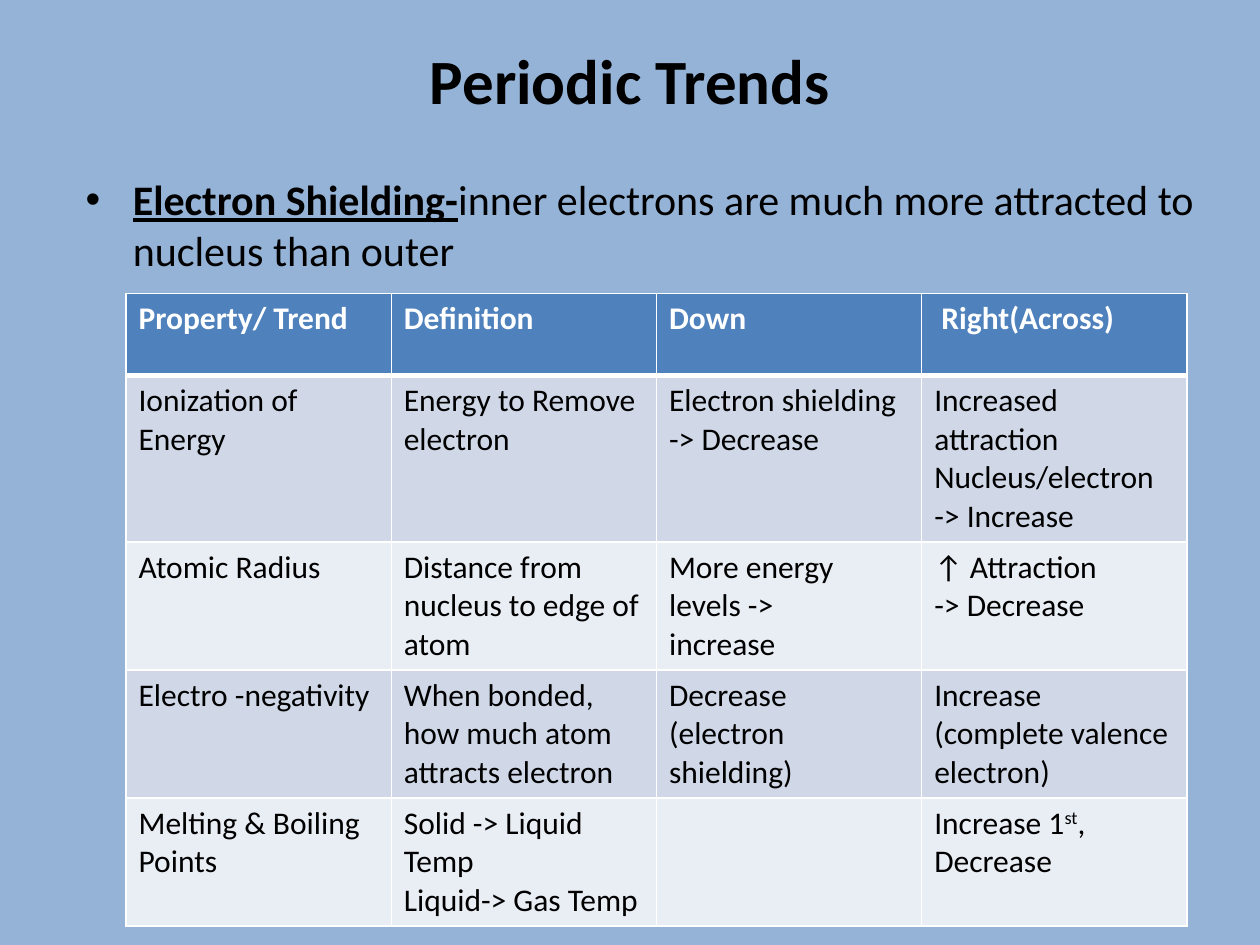
from dataclasses import dataclass

from lxml.etree import SubElement
from pptx import Presentation
from pptx.dml.color import RGBColor as Color
from pptx.enum.text import MSO_ANCHOR as Anchor, PP_ALIGN as Align
from pptx.oxml.ns import qn
from pptx.util import Cm, Pt


@dataclass(frozen=True)
class Theme:
    font: str = "Calibri"
    background: str = "95B3D7"
    ink: str = "000000"
    white: str = "FFFFFF"
    header: str = "4F81BD"
    bands: tuple[str, str] = ("D0D8E8", "E9EDF4")
    title_size: int = 36
    body_size: int = 24
    table_size: int = 18
    thin: int = 1
    thick: int = 3


@dataclass(frozen=True)
class Box:
    left: float
    top: float
    width: float
    height: float

    def lengths(self) -> tuple:
        return Cm(self.left), Cm(self.top), Cm(self.width), Cm(self.height)


@dataclass(frozen=True)
class Trend:
    name: str
    definition: str
    down: str
    across: str

    def cells(self) -> tuple[str, ...]:
        return self.name, self.definition, self.down, self.across


THEME = Theme()
TITLE_BOX = Box(1.27, 0, 22.86, 3.18)
BODY_BOX = Box(1.47, 3.38, 22.86, 2.74)
TABLE_BOX = Box(2.54, 5.92, 21.39, 8.25)
SUPERSCRIPT_MARK = "^"

HEADINGS = Trend("Property/ Trend", "Definition", "Down", " Right(Across)")
TRENDS = (
    Trend("Ionization of Energy", "Energy to Remove electron",
          "Electron shielding -> Decrease",
          "Increased attraction Nucleus/electron\n-> Increase"),
    Trend("Atomic Radius", "Distance from nucleus to edge of atom",
          "More energy levels ->\nincrease", "↑ Attraction\n-> Decrease"),
    Trend("Electro -negativity", "When bonded, how much atom attracts electron",
          "Decrease\n(electron shielding)",
          "Increase (complete valence electron)"),
    Trend("Melting & Boiling Points", "Solid -> Liquid Temp\nLiquid-> Gas Temp",
          "", "Increase 1^st^,\nDecrease"),
)


def add_run(paragraph, text: str, *, size: int, color: str = THEME.ink,
            bold: bool = False, underline: bool = False,
            superscript: bool = False) -> None:
    run = paragraph.add_run()
    run.text = text
    font = run.font
    font.name, font.size = THEME.font, Pt(size)
    font.bold, font.underline = bold, underline
    font.color.rgb = Color.from_string(color)
    if superscript:
        run._r.get_or_add_rPr().set("baseline", "30000")


def place(shape, box: Box) -> None:
    shape.left, shape.top, shape.width, shape.height = box.lengths()


def set_border(cell, side: str, width: int) -> None:
    line = SubElement(cell._tc.get_or_add_tcPr(), qn(f"a:ln{side}"),
                      w=str(Pt(width)))
    fill = SubElement(line, qn("a:solidFill"))
    SubElement(fill, qn("a:srgbClr"), val=THEME.white)


def fill_cell(cell, text: str, *, fill: str, color: str, bold: bool,
              top: int, bottom: int) -> None:
    """Style a cell; newlines split paragraphs, marks enclose superscript."""
    widths = {"L": THEME.thin, "R": THEME.thin, "T": top, "B": bottom}
    for side, width in widths.items():
        set_border(cell, side, width)
    cell.fill.solid()
    cell.fill.fore_color.rgb = Color.from_string(fill)
    frame = cell.text_frame
    for number, line in enumerate(text.split("\n")):
        paragraph = frame.add_paragraph() if number else frame.paragraphs[0]
        paragraph.font.size = Pt(THEME.table_size)
        for position, part in enumerate(line.split(SUPERSCRIPT_MARK)):
            if part:
                add_run(paragraph, part, size=THEME.table_size, color=color,
                        bold=bold, superscript=position % 2 == 1)


def add_trend_table(slide) -> None:
    rows = (HEADINGS, *TRENDS)
    columns = len(HEADINGS.cells())
    table = slide.shapes.add_table(len(rows), columns,
                                   *TABLE_BOX.lengths()).table
    for row_number, trend in enumerate(rows):
        is_header = row_number == 0
        for column, text in enumerate(trend.cells()):
            fill_cell(
                table.cell(row_number, column), text,
                fill=THEME.header if is_header else THEME.bands[(row_number - 1) % 2],
                color=THEME.white if is_header else THEME.ink,
                bold=is_header,
                top=THEME.thick if row_number == 1 else THEME.thin,
                bottom=THEME.thick if is_header else THEME.thin,
            )


def main() -> None:
    presentation = Presentation()
    presentation.slide_width, presentation.slide_height = Cm(25.4), Cm(19.05)
    slide = presentation.slides.add_slide(presentation.slide_layouts[1])
    slide.background.fill.solid()
    slide.background.fill.fore_color.rgb = Color.from_string(THEME.background)

    title, body = slide.shapes.title, slide.placeholders[1]
    place(title, TITLE_BOX)
    title.text_frame.vertical_anchor = Anchor.MIDDLE
    heading = title.text_frame.paragraphs[0]
    heading.alignment = Align.CENTER
    add_run(heading, "Periodic Trends", size=THEME.title_size, bold=True)

    place(body, BODY_BOX)
    bullet = body.text_frame.paragraphs[0]
    add_run(bullet, "Electron Shielding-", size=THEME.body_size, bold=True,
            underline=True)
    add_run(bullet, "inner electrons are much more attracted to nucleus than outer",
            size=THEME.body_size)

    add_trend_table(slide)
    presentation.save("out.pptx")


if __name__ == "__main__":
    main()
